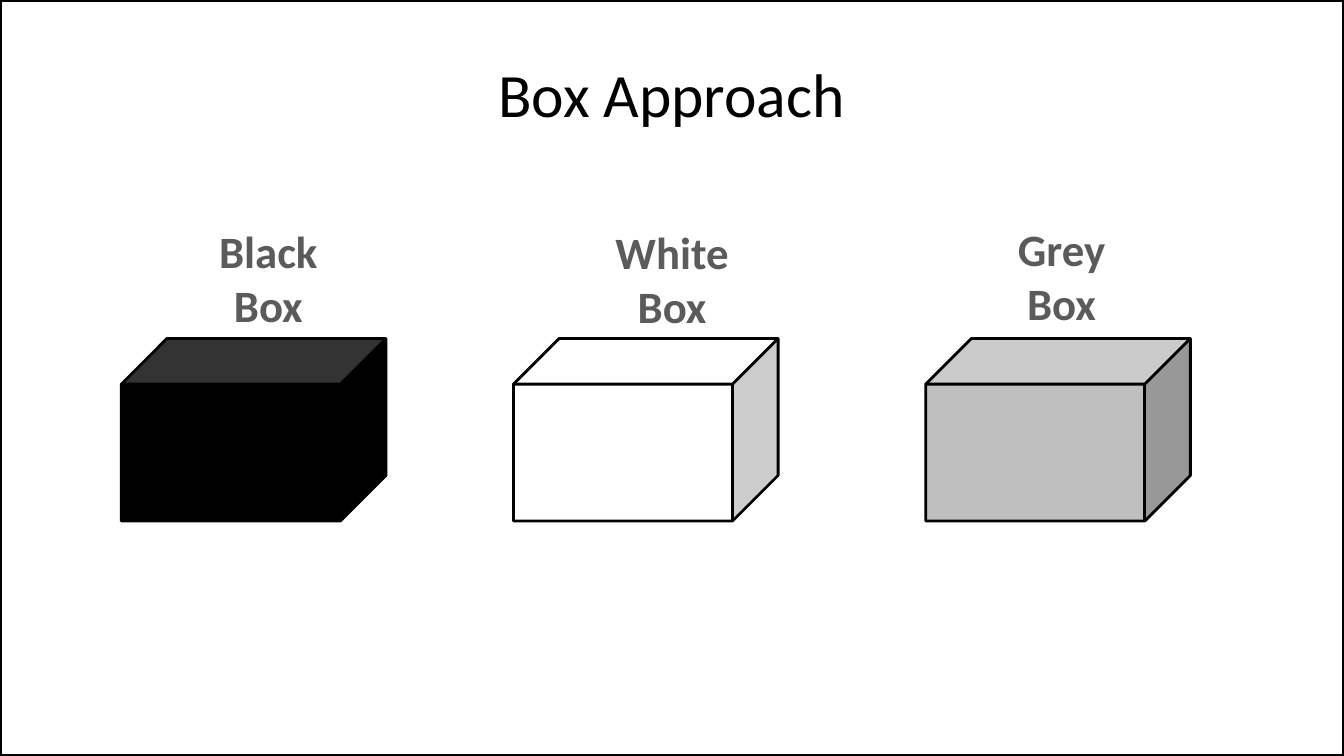
"""Build the Box Approach slide with three labelled cubes."""
from dataclasses import dataclass

from pptx import Presentation
from pptx.dml.color import RGBColor
from pptx.enum.shapes import MSO_SHAPE
from pptx.enum.text import MSO_ANCHOR, MSO_AUTO_SIZE, PP_ALIGN
from pptx.shapes.autoshape import Shape
from pptx.slide import Slide
from pptx.text.text import TextFrame
from pptx.util import Cm, Pt

BLACK = RGBColor(0x00, 0x00, 0x00)
WHITE = RGBColor(0xFF, 0xFF, 0xFF)
GREY = RGBColor(0xBF, 0xBF, 0xBF)
LABEL_GREY = RGBColor(0x5B, 0x5B, 0x5B)
FONT = "Calibri"
SLIDE_WIDTH, SLIDE_HEIGHT = Cm(33.87), Cm(19.05)
CUBE_TOP, CUBE_WIDTH, CUBE_HEIGHT = Cm(8.53), Cm(6.67), Cm(4.6)
LABEL_HEIGHT = Cm(3)


@dataclass(frozen=True)
class Box:
    """One cube and its label, with lengths in centimetres."""

    name: str
    color: RGBColor
    cube_left: float
    label_left: float
    label_top: float
    label_width: float


BOXES = (
    Box("Black", BLACK, 3.06, 2.79, 5.51, 7.95),
    Box("White", WHITE, 12.94, 12.9, 5.54, 8.08),
    Box("Grey", GREY, 23.33, 23.29, 5.46, 6.93),
)


def write_lines(frame: TextFrame, lines: tuple[str, ...], size: int,
                color: RGBColor, bold: bool = False) -> None:
    """Write each line as a centred paragraph."""
    for index, line in enumerate(lines):
        paragraph = frame.paragraphs[0] if index == 0 else frame.add_paragraph()
        paragraph.alignment = PP_ALIGN.CENTER
        run = paragraph.add_run()
        run.text = line
        run.font.name = FONT
        run.font.size = Pt(size)
        run.font.bold = bold
        run.font.color.rgb = color


def outline(shape: Shape, width: int) -> None:
    """Give the shape a black line and no shadow."""
    shape.shadow.inherit = False
    shape.line.color.rgb = BLACK
    shape.line.width = Pt(width)


def add_frame(slide: Slide) -> None:
    """Draw the border around the slide."""
    border = slide.shapes.add_shape(MSO_SHAPE.RECTANGLE, 0, 0, SLIDE_WIDTH, SLIDE_HEIGHT)
    border.fill.background()
    outline(border, 3)


def add_title(slide: Slide) -> None:
    """Place and fill the title placeholder."""
    title = slide.shapes.title
    title.left, title.top, title.width, title.height = Cm(1.69), Cm(0.76), Cm(30.48), Cm(3.18)
    title.text_frame.vertical_anchor = MSO_ANCHOR.MIDDLE
    write_lines(title.text_frame, ("Box Approach",), 44, BLACK)


def add_cube(slide: Slide, box: Box) -> None:
    """Draw the cube of a box."""
    cube = slide.shapes.add_shape(
        MSO_SHAPE.CUBE, Cm(box.cube_left), CUBE_TOP, CUBE_WIDTH, CUBE_HEIGHT)
    cube.fill.solid()
    cube.fill.fore_color.rgb = box.color
    outline(cube, 2)


def add_label(slide: Slide, box: Box) -> None:
    """Write the two-line label of a box."""
    label = slide.shapes.add_textbox(
        Cm(box.label_left), Cm(box.label_top), Cm(box.label_width), LABEL_HEIGHT)
    label.text_frame.word_wrap = True
    label.text_frame.auto_size = MSO_AUTO_SIZE.SHAPE_TO_FIT_TEXT
    write_lines(label.text_frame, (box.name, "Box"), 32, LABEL_GREY, bold=True)


def main() -> None:
    """Build and save the presentation."""
    presentation = Presentation()
    presentation.slide_width = SLIDE_WIDTH
    presentation.slide_height = SLIDE_HEIGHT
    slide = presentation.slides.add_slide(presentation.slide_layouts[5])
    add_frame(slide)
    add_title(slide)
    for box in BOXES:
        add_cube(slide, box)
    for box in BOXES:
        add_label(slide, box)
    presentation.save("out.pptx")


if __name__ == "__main__":
    main()
